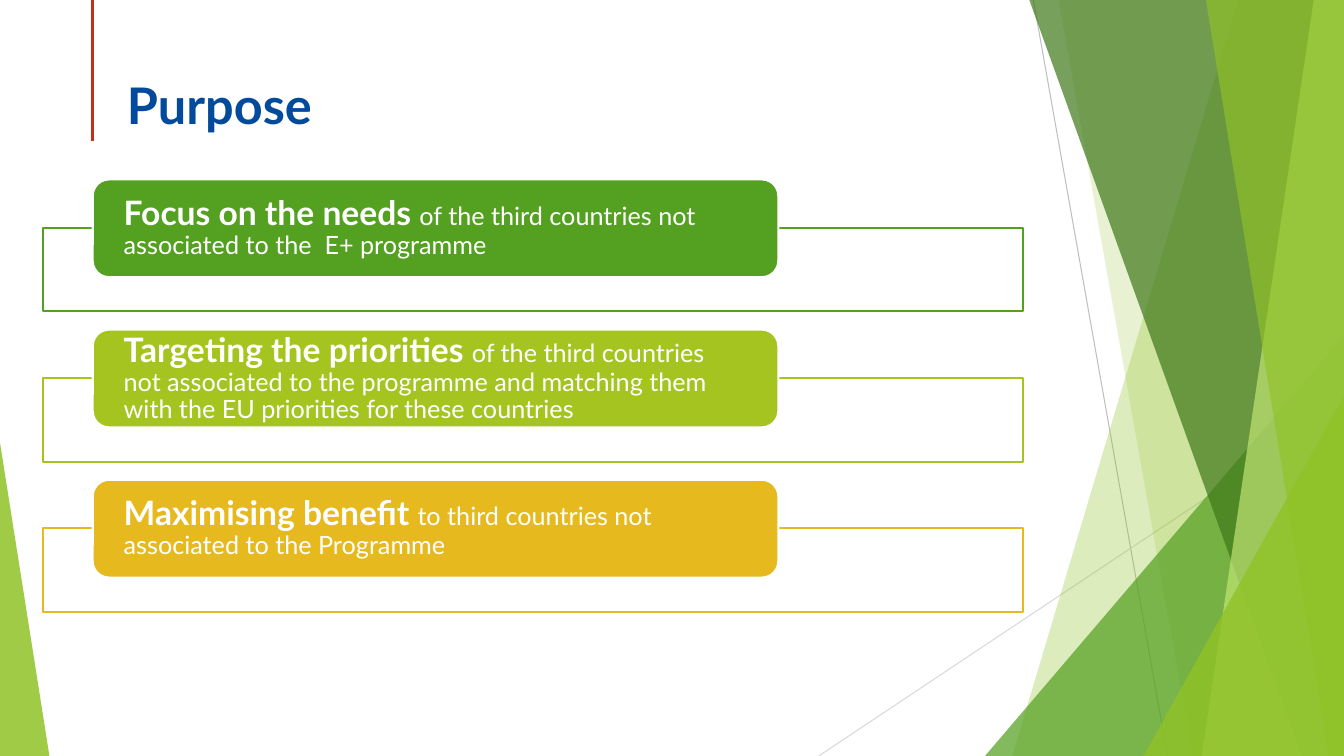
from lxml.etree import SubElement
from pptx import Presentation
from pptx.dml.color import RGBColor
from pptx.enum.shapes import MSO_CONNECTOR, MSO_SHAPE
from pptx.enum.text import MSO_ANCHOR
from pptx.oxml.ns import qn
from pptx.util import Inches, Pt

WIDTH, HEIGHT = Inches(13.33), Inches(7.5)
FONT = "Lato"
COLORS = {
    "white": "FFFFFF", "title": "024B9C", "accent": "C42F1A",
    "ray": "BFBFBF", "pale ray": "D9D9D9",
    "lime": "90C226", "green": "54A021", "forest": "3F7819", "mint": "C0E474",
    "olive": "A5C41F", "amber": "E6B91E",
}
PURPOSES = [
    ("green", "Focus on the needs ",
     "of the third countries not associated to the  E+ programme"),
    ("olive", "Targeting the priorities ",
     "of the third countries not associated to the programme and matching "
     "them with the EU priorities for these countries"),
    ("amber", "Maximising benefit ",
     "to third countries not associated to the Programme"),
]
ROW_PITCH = 19.87


def across(percent):
    return round(WIDTH * percent / 100)


def down(percent):
    return round(HEIGHT * percent / 100)


def area(left, top, width, height):
    return across(left), down(top), across(width), down(height)


def rgb(color):
    return RGBColor.from_string(COLORS[color])


def paint(shape, fill, opacity=100, outline=None):
    """Fill a shape, with opacity in percent, and outline it if asked."""
    shape.shadow.inherit = False
    shape.fill.solid()
    shape.fill.fore_color.rgb = rgb(fill)
    if opacity < 100:
        tint = shape.fill._xPr.find(qn("a:solidFill"))[0]
        SubElement(tint, qn("a:alpha")).set("val", str(opacity * 1000))
    if outline:
        shape.line.color.rgb = rgb(outline)
        shape.line.width = Pt(1.5)
    else:
        shape.line.fill.background()


def add_line(slide, start, end, color, weight):
    line = slide.shapes.add_connector(
        MSO_CONNECTOR.STRAIGHT, across(start[0]), down(start[1]),
        across(end[0]), down(end[1]))
    line.line.color.rgb = rgb(color)
    line.line.width = Pt(weight)
    SubElement(line._element.spPr, qn("a:effectLst"))


def add_band(slide, top_x, bottom_x, color, opacity):
    """Full-height band from a slanted left edge to the slide's right edge."""
    outline = slide.shapes.build_freeform(across(top_x), 0)
    outline.add_line_segments(
        [(WIDTH, 0), (WIDTH, HEIGHT), (across(bottom_x), HEIGHT)], close=True)
    paint(outline.convert_to_shape(), color, opacity)


def add_corner(slide, left, top, width, apex, color, opacity):
    """Triangle standing on the slide's bottom edge."""
    corner = slide.shapes.add_shape(
        MSO_SHAPE.ISOSCELES_TRIANGLE, *area(left, top, width, 100 - top))
    corner.adjustments[0] = apex
    paint(corner, color, opacity)


def add_backdrop(slide):
    add_line(slide, (76.89, 0), (86.87, 100), "ray", 0.75)
    add_line(slide, (100, 53.73), (60.92, 100), "pale ray", 0.75)
    add_band(slide, 92.12, 75.32, "lime", 30)
    add_band(slide, 78.77, 88.75, "lime", 20)
    add_corner(slide, 73.29, 44.4, 26.71, 1, "green", 72)
    add_band(slide, 76.59, 96.85, "forest", 70)
    add_band(slide, 97.75, 89.42, "mint", 70)
    add_band(slide, 89.72, 98.87, "lime", 65)
    add_corner(slide, 85.07, 52.4, 14.93, 1, "lime", 80)
    add_corner(slide, 0, 58.53, 3.68, 0, "lime", 85)
    add_line(slide, (6.9, 0), (6.9, 18.67), "accent", 2.25)


def add_title(slide, text):
    frame = slide.shapes.add_textbox(*area(8.7, 9.2, 70.52, 19.2)).text_frame
    frame.word_wrap = True
    title = frame.paragraphs[0]
    title.text = text
    title.font.name, title.font.size, title.font.bold = FONT, Pt(36), True
    title.font.color.rgb = rgb("title")


def add_purpose(slide, row, color, lead, detail):
    offset = row * ROW_PITCH
    border = slide.shapes.add_shape(
        MSO_SHAPE.RECTANGLE, *area(3.23, 30.13 + offset, 72.92, 11.07))
    paint(border, "white", 90, color)
    label = slide.shapes.add_shape(
        MSO_SHAPE.ROUNDED_RECTANGLE, *area(6.9, 23.73 + offset, 51.01, 12.93))
    paint(label, color, outline="white")

    frame = label.text_frame
    frame.word_wrap = True
    frame.vertical_anchor = MSO_ANCHOR.MIDDLE
    frame.margin_left = frame.margin_right = across(1.95)
    frame.margin_top = frame.margin_bottom = 0
    statement = frame.paragraphs[0]
    statement.alignment = 1
    statement.line_spacing = 0.9
    statement.font.name = FONT
    statement.font.color.rgb = rgb("white")
    for words, size, bold in ((lead, 24, True), (detail, 18, False)):
        run = statement.add_run()
        run.text = words
        run.font.name, run.font.size, run.font.bold = FONT, Pt(size), bold
        run.font.color.rgb = rgb("white")


def main():
    deck = Presentation()
    deck.slide_width, deck.slide_height = WIDTH, HEIGHT
    slide = deck.slides.add_slide(deck.slide_layouts[6])
    add_backdrop(slide)
    add_title(slide, "Purpose")
    for row, purpose in enumerate(PURPOSES):
        add_purpose(slide, row, *purpose)
    deck.save("out.pptx")


if __name__ == "__main__":
    main()
